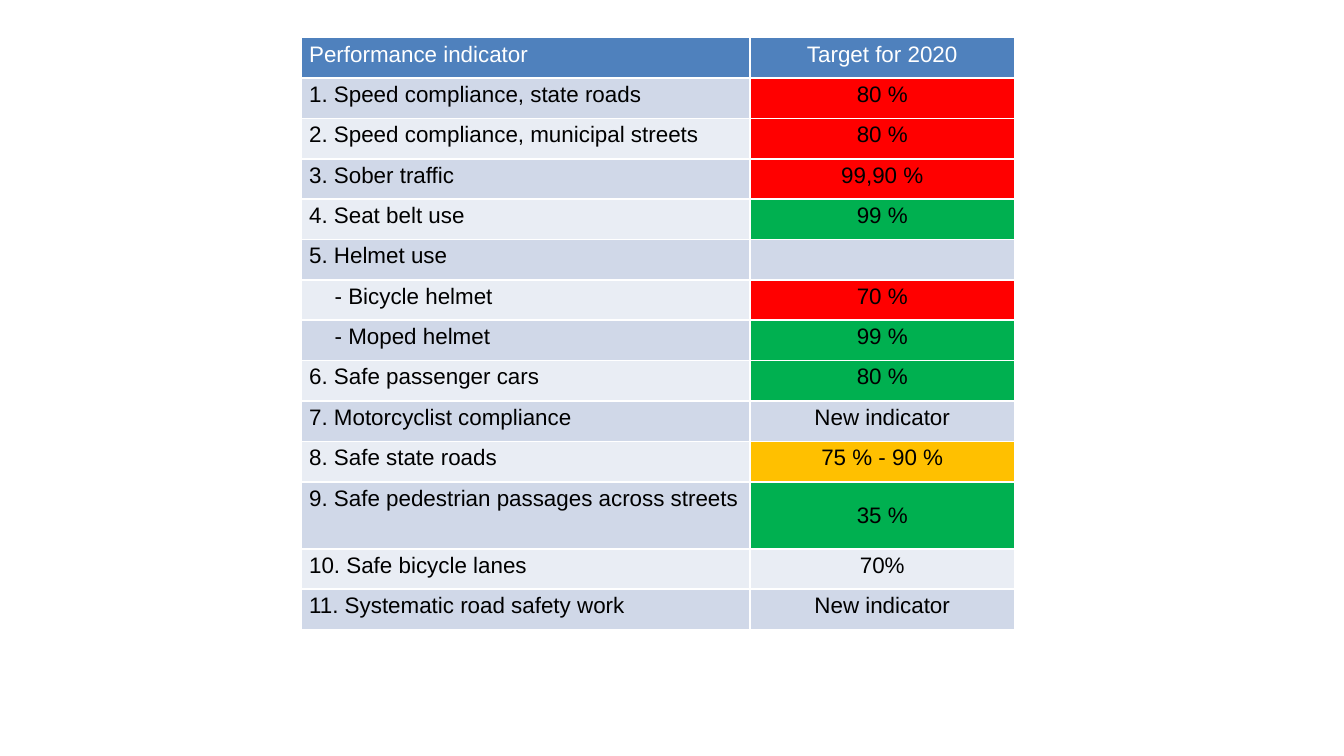
"""Build a slide with a table of road safety indicators and their 2020 targets."""
from lxml import etree
from pptx import Presentation, util as u
from pptx.dml.color import RGBColor
from pptx.enum import text
from pptx.oxml import ns

RED, GREEN, AMBER, BLUE = "FF0000", "00B050", "FFC000", "4F81BD"
BANDS = ["E9EDF4", "D0D8E8"]
COLS, HEIGHT, TALL_ROW = [3.34, 1.97], 4.41, 0.5
ROWS = [
    ("Performance indicator", "Target for 2020", BLUE),
    ("1. Speed compliance, state roads", "80 %", RED),
    ("2. Speed compliance, municipal streets", "80 %", RED),
    ("3. Sober traffic", "99,90 %", RED),
    ("4. Seat belt use", "99 %", GREEN),
    ("5. Helmet use", "", None),
    ("- Bicycle helmet", "70 %", RED),
    ("- Moped helmet", "99 %", GREEN),
    ("6. Safe passenger cars", "80 %", GREEN),
    ("7. Motorcyclist compliance", "New indicator", None),
    ("8. Safe state roads", "75 % - 90 %", AMBER),
    ("9. Safe pedestrian passages across streets", "35 %", GREEN),
    ("10. Safe bicycle lanes", "70%", None),
    ("11. Systematic road safety work", "New indicator", None),
]
ROW = (HEIGHT - TALL_ROW) / (len(ROWS) - 1)
MARGINS = {"margin_left": u.Inches(0.06), "margin_right": u.Inches(0.06),
           "margin_top": u.Inches(0.03), "margin_bottom": u.Inches(0.03)}
FONT = {"name": "Arial", "size": u.Pt(12), "bold": False}


def rgb(value):
    return RGBColor.from_string(value)


def add_border(cell, side):
    tag = ns.qn(f"a:ln{side}")
    ln = etree.SubElement(cell._tc.get_or_add_tcPr(), tag, w=str(u.Pt(1)))
    fill = etree.SubElement(ln, ns.qn("a:solidFill"))
    etree.SubElement(fill, ns.qn("a:srgbClr"), val="FFFFFF")


prs = Presentation()
prs.slide_width = u.Inches(10)
prs.slide_height = prs.slide_width * 9 // 16
s = prs.slides.add_slide(prs.slide_layouts[6])
size = [u.Inches(sum(COLS)), u.Inches(HEIGHT)]
table = s.shapes.add_table(len(ROWS), len(COLS), u.Inches(2.24), u.Inches(0.28), *size).table
for column, width in zip(table.columns, COLS):
    column.width = u.Inches(width)

for i, (label, target, status) in enumerate(ROWS):
    tall = label.startswith("9.")
    table.rows[i].height = u.Inches(TALL_ROW if tall else ROW)
    band = BLUE if i == 0 else BANDS[i % 2]
    for j, (words, color) in enumerate([(label, band), (target, status or band)]):
        cell = table.cell(i, j)
        for name, value in MARGINS.items():
            setattr(cell, name, value)
        for side in "LRTB":
            add_border(cell, side)
        cell.fill.solid()
        cell.fill.fore_color.rgb = rgb(color)
        p = cell.text_frame.paragraphs[0]
        if j == 1:
            p.alignment = text.PP_ALIGN.CENTER
            if tall:
                cell.vertical_anchor = text.MSO_ANCHOR.MIDDLE
        if words.startswith("-"):
            p._p.get_or_add_pPr().set("marL", str(u.Inches(0.19)))
        if words:
            r = p.add_run()
            r.text = words
            for name, value in FONT.items():
                setattr(r.font, name, value)
            r.font.color.rgb = rgb("FFFFFF" if i == 0 else "000000")
        else:
            etree.SubElement(p._p, ns.qn("a:endParaRPr"), sz="1200")

prs.save("out.pptx")
